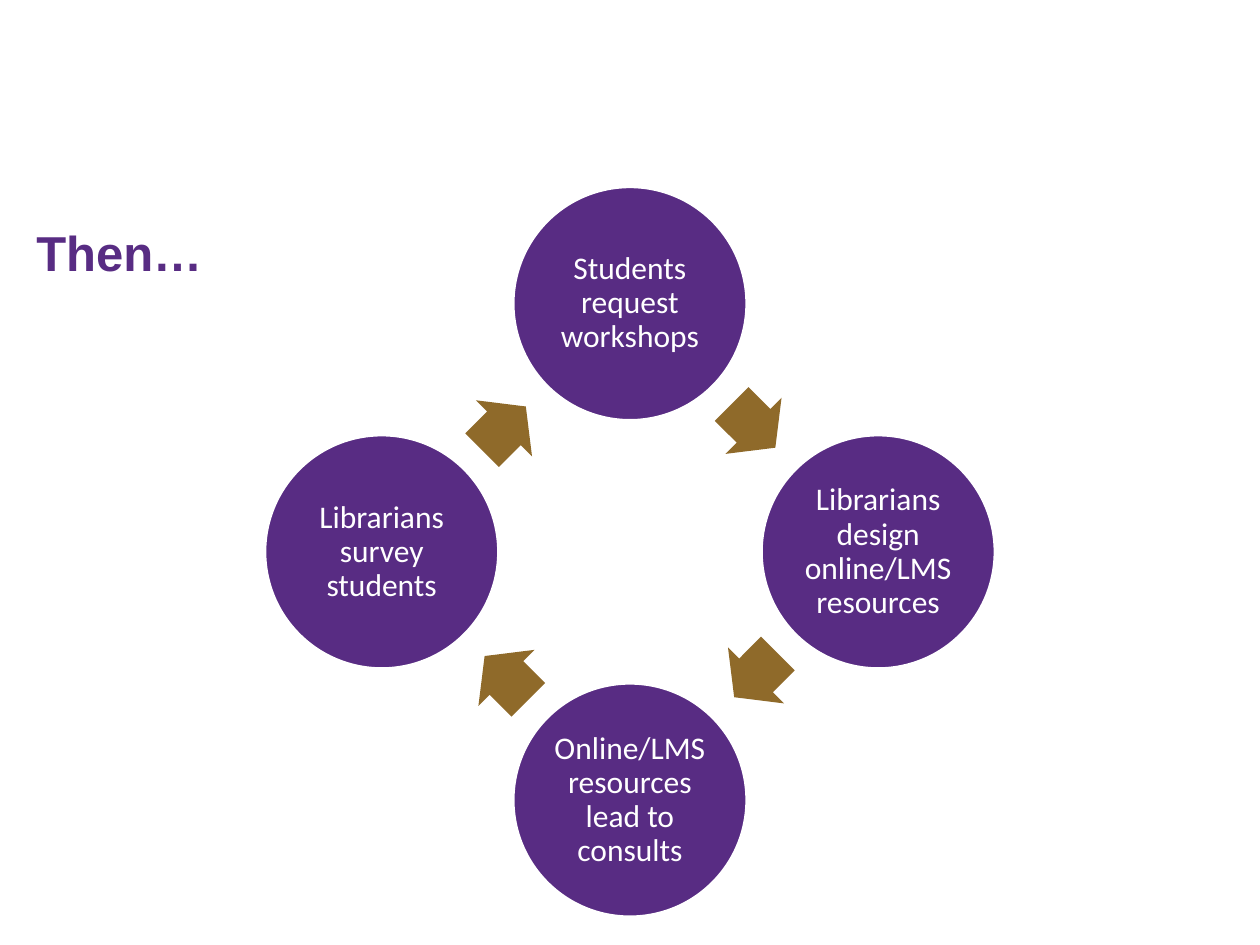
from pptx import Presentation
from pptx.dml.color import RGBColor
from pptx.enum.shapes import MSO_SHAPE
from pptx.enum.text import MSO_ANCHOR, MSO_AUTO_SIZE, PP_ALIGN
from pptx.util import Inches, Pt

OVAL, RIGHT_ARROW = MSO_SHAPE.OVAL, MSO_SHAPE.RIGHT_ARROW
MIDDLE, CENTER, LEFT = MSO_ANCHOR.MIDDLE, PP_ALIGN.CENTER, PP_ALIGN.LEFT
GROW = MSO_AUTO_SIZE.SHAPE_TO_FIT_TEXT

PURPLE = RGBColor(0x58, 0x2C, 0x83)
GOLD = RGBColor(0x8F, 0x6A, 0x2A)
WHITE = RGBColor(0xFF, 0xFF, 0xFF)

# Cycle geometry in inches; steps run clockwise from the top
CENTER_X, CENTER_Y = 5, 4.38
CIRCLE_OFFSET = (0, -1.97)
ARROW_OFFSET = (0.98, -1)
CIRCLE_SIZE = 1.86
ARROW_WIDTH, ARROW_HEIGHT = 0.49, 0.63

STEPS = [
    "Students request workshops",
    "Librarians design online/LMS resources",
    "Online/LMS resources lead to consults",
    "Librarians survey students",
]


def quarter_turns(offset, turns):
    """Turn an offset clockwise about the cycle center."""
    x, y = offset
    for _ in range(turns):
        x, y = -y, x
    return x, y


def write_text(shape, text, *, font, size, color, bold=False,
               align=LEFT, line_spacing=1.0):
    paragraph = shape.text_frame.paragraphs[0]
    paragraph.text = text
    paragraph.alignment = align
    paragraph.line_spacing = line_spacing
    run_font = paragraph.runs[0].font
    run_font.name = font
    run_font.size = Pt(size)
    run_font.bold = bold
    run_font.color.rgb = color


def add_centered_shape(slide, kind, offset, width, height, fill):
    x, y = offset
    shape = slide.shapes.add_shape(
        kind, Inches(CENTER_X + x - width / 2), Inches(CENTER_Y + y - height / 2),
        Inches(width), Inches(height))
    shape.shadow.inherit = False
    shape.fill.solid()
    shape.fill.fore_color.rgb = fill
    return shape


def add_step(slide, index, text):
    circle = add_centered_shape(slide, OVAL, quarter_turns(CIRCLE_OFFSET, index),
                                CIRCLE_SIZE, CIRCLE_SIZE, PURPLE)
    circle.line.color.rgb = WHITE
    circle.line.width = Pt(2)
    frame = circle.text_frame
    frame.word_wrap = True
    frame.vertical_anchor = MIDDLE
    frame.margin_left = frame.margin_right = Inches(0.03)
    frame.margin_top = frame.margin_bottom = Inches(0.03)
    write_text(circle, text, font="Calibri", size=18, color=WHITE,
               align=CENTER, line_spacing=0.9)


def add_arrow(slide, index):
    arrow = add_centered_shape(slide, RIGHT_ARROW, quarter_turns(ARROW_OFFSET, index),
                               ARROW_WIDTH, ARROW_HEIGHT, GOLD)
    arrow.line.fill.background()
    arrow.adjustments[0] = 0.6
    arrow.adjustments[1] = 0.5
    arrow.rotation = 45 + 90 * index


def add_heading(slide, text):
    box = slide.shapes.add_textbox(Inches(0.19), Inches(1.72), Inches(1.53), Inches(0.57))
    box.text_frame.word_wrap = False
    box.text_frame.auto_size = GROW
    write_text(box, text, font="Arial", size=28, color=PURPLE, bold=True)


def main():
    presentation = Presentation()
    presentation.slide_width = Inches(10)
    presentation.slide_height = Inches(7.5)
    slide = presentation.slides.add_slide(presentation.slide_layouts[6])

    # Cycle of steps, each followed by an arrow to the next
    for index, text in enumerate(STEPS):
        add_step(slide, index, text)
        add_arrow(slide, index)

    # Heading
    add_heading(slide, "Then…")

    presentation.save("out.pptx")


if __name__ == "__main__":
    main()
